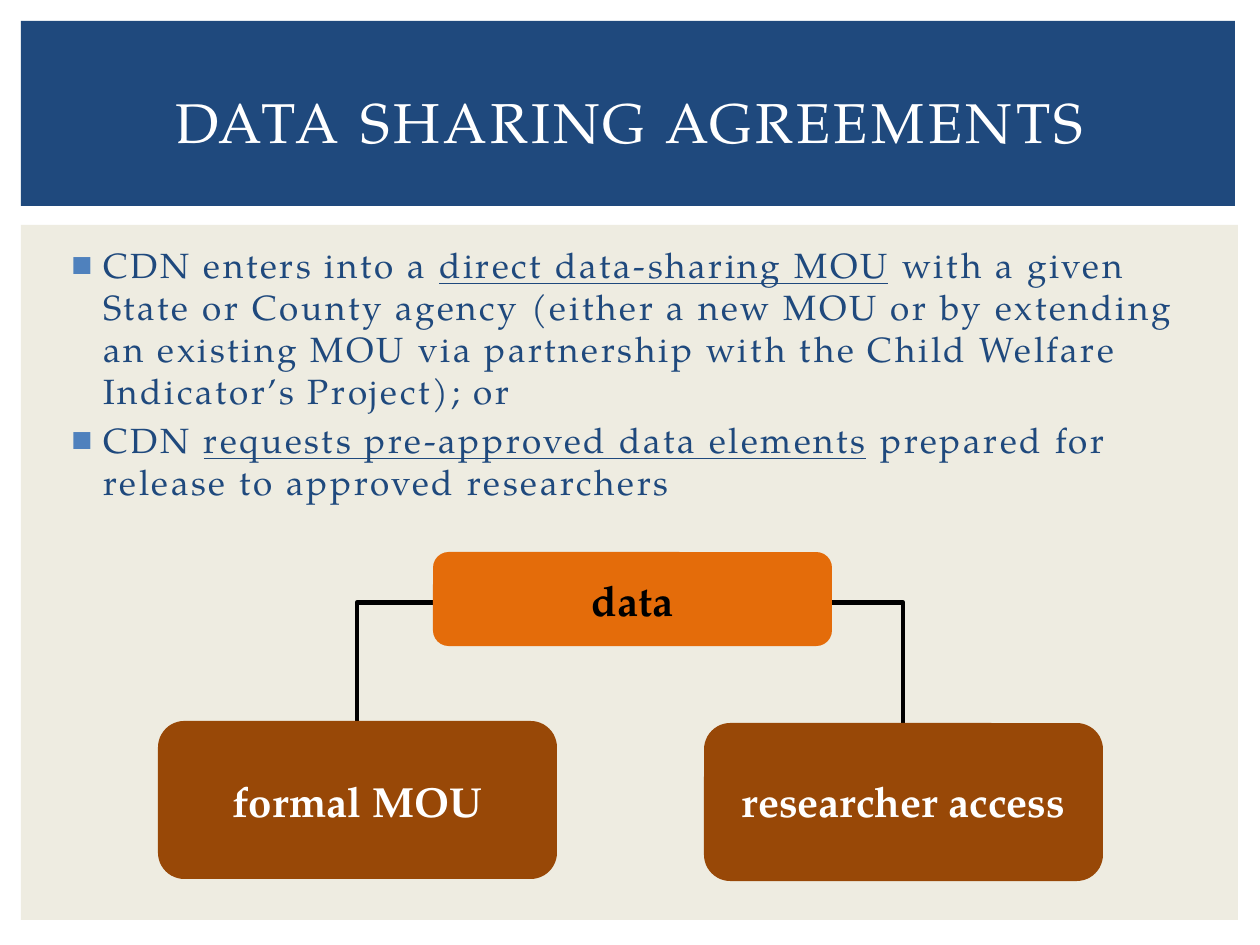
from dataclasses import dataclass

from lxml import etree
from pptx import Presentation
from pptx.dml.color import RGBColor
from pptx.enum.shapes import MSO_CONNECTOR, MSO_SHAPE
from pptx.enum.text import MSO_ANCHOR, PP_ALIGN
from pptx.oxml.ns import qn
from pptx.util import Pt

RECTANGLE, ROUNDED = MSO_SHAPE.RECTANGLE, MSO_SHAPE.ROUNDED_RECTANGLE
ELBOW = MSO_CONNECTOR.ELBOW
CENTER, LEFT = PP_ALIGN.CENTER, PP_ALIGN.LEFT
MIDDLE, TOP = MSO_ANCHOR.MIDDLE, MSO_ANCHOR.TOP
EMU_PER_PX = 914400 / 126


@dataclass(frozen=True)
class Theme:
    font: str = "TeX Gyre Pagella"
    navy: str = "1F497D"
    cream: str = "EEECE1"
    bullet: str = "4F81BD"
    orange: str = "E46C0A"
    brown: str = "984807"
    white: str = "FFFFFF"
    black: str = "000000"
    title_size: int = 32
    body_size: int = 20
    label_size: int = 24


THEME = Theme()
BULLETS = [
    [("CDN enters into a ", False), ("direct data-sharing MOU", True),
     (" with a given State or County agency (either a new MOU or by extending "
      "an existing MOU via partnership with the Child Welfare Indicator’s "
      "Project); or", False)],
    [("CDN ", False), ("requests pre-approved data elements", True),
     (" prepared for release to approved researchers", False)],
]


def px(length):
    return round(length * EMU_PER_PX)


def add_panel(page, kind, box, color):
    panel = page.shapes.add_shape(kind, *map(px, box))
    panel.shadow.inherit = False
    panel.fill.solid()
    panel.fill.fore_color.rgb = RGBColor.from_string(color)
    panel.line.fill.background()
    return panel


def style_para(para, size, color, align=LEFT, bold=False):
    para.alignment = align
    para.font.name = THEME.font
    para.font.size = Pt(size)
    para.font.bold = bold
    para.font.color.rgb = RGBColor.from_string(color)


def track(span, points):
    """Set the letter spacing of a run."""
    span._r.get_or_add_rPr().set("spc", str(round(points * 100)))


def add_bullet(para, indent, hang):
    props = para._p.get_or_add_pPr()
    props.set("marL", str(px(indent)))
    props.set("indent", str(-px(hang)))
    color = etree.SubElement(props, qn("a:buClr"))
    etree.SubElement(color, qn("a:srgbClr"), val=THEME.bullet)
    etree.SubElement(props, qn("a:buFont"), typeface="Arial")
    etree.SubElement(props, qn("a:buChar"), char="■")
    # The schema puts the default run properties after the bullet.
    props.append(props.find(qn("a:defRPr")))


def build_title(page, box):
    left, top, width, height = box
    add_panel(page, RECTANGLE, box, THEME.navy)
    title = page.shapes.title
    title.left, title.top = px(left + 32), px(top + 28)
    title.width, title.height = px(width - 60), px(height - 40)
    page.shapes._spTree.append(title._element)
    frame = title.text_frame
    frame.word_wrap = True
    frame.vertical_anchor = MIDDLE
    para = frame.paragraphs[0]
    span = para.add_run()
    span.text = "DATA SHARING AGREEMENTS"
    style_para(para, THEME.title_size, THEME.white, CENTER)
    track(span, 2)


def build_bullets(page, box):
    frame = page.shapes.add_textbox(*map(px, box)).text_frame
    frame.word_wrap = True
    frame.vertical_anchor = TOP
    for index, parts in enumerate(BULLETS):
        para = frame.add_paragraph() if index else frame.paragraphs[0]
        para.space_before = Pt(4)
        style_para(para, THEME.body_size, THEME.navy)
        add_bullet(para, indent=38, hang=32)
        for text, underlined in parts:
            span = para.add_run()
            span.text = text
            span.font.underline = underlined
            track(span, 1.5)


def add_bracket(page, start, end, rise):
    """Join two points by a line that rises, crosses over and drops."""
    (x1, y1), (x2, y2) = start, end
    span, drop = x2 - x1, y2 - y1
    bracket = page.shapes.add_connector(ELBOW, 0, 0, 0, 0)
    # The preset runs sideways, so its frame is turned about its centre.
    bracket.left, bracket.top = px((x1 + x2 - drop) / 2), px((y1 + y2 - span) / 2)
    bracket.width, bracket.height = px(drop), px(span)
    bracket.line.color.rgb = RGBColor.from_string(THEME.black)
    bracket.line.width = Pt(2.75)
    props = bracket._element.spPr
    frame = props.find(qn("a:xfrm"))
    frame.set("rot", str(270 * 60000))
    frame.set("flipH", "1")
    shape = props.find(qn("a:prstGeom"))
    shape.set("prst", "bentConnector4")
    guides = shape.find(qn("a:avLst"))
    for name, ratio in (("adj1", -rise / drop), ("adj2", 1)):
        etree.SubElement(guides, qn("a:gd"), name=name,
                         fmla=f"val {round(ratio * 100000)}")
    etree.SubElement(props, qn("a:effectLst"))


def add_node(page, box, text, fill, color, label_top):
    left, top, width, _ = box
    add_panel(page, ROUNDED, box, fill)
    label = page.shapes.add_textbox(*map(px, (left, top + label_top, width, 64)))
    label.text_frame.word_wrap = True
    para = label.text_frame.paragraphs[0]
    para.text = text
    style_para(para, THEME.label_size, color, CENTER, bold=True)


def build_diagram(page, box):
    left, top, width, height = box
    node_width, child_height = 399, 158
    right = left + width - node_width
    child_top = top + height - child_height
    half = node_width // 2
    add_bracket(page, (left + half, child_top - 2), (right + half, child_top), 119)
    add_node(page, (left, child_top - 2, node_width, child_height),
             "formal MOU", THEME.brown, THEME.white, 48)
    add_node(page, (right, child_top, node_width, child_height),
             "researcher access", THEME.brown, THEME.white, 46)
    add_node(page, (left + 275, top, node_width, 94),
             "data", THEME.orange, THEME.black, 16)


def build_slide(deck):
    page = deck.slides.add_slide(deck.slide_layouts[5])
    add_panel(page, RECTANGLE, (21, 225, 1217, 695), THEME.cream)
    build_title(page, (21, 21, 1214, 185))
    build_bullets(page, (53, 237, 1158, 309))
    build_diagram(page, (158, 552, 945, 329))


def main():
    deck = Presentation()
    deck.slide_width, deck.slide_height = px(1260), px(945)
    build_slide(deck)
    deck.save("out.pptx")


if __name__ == "__main__":
    main()
